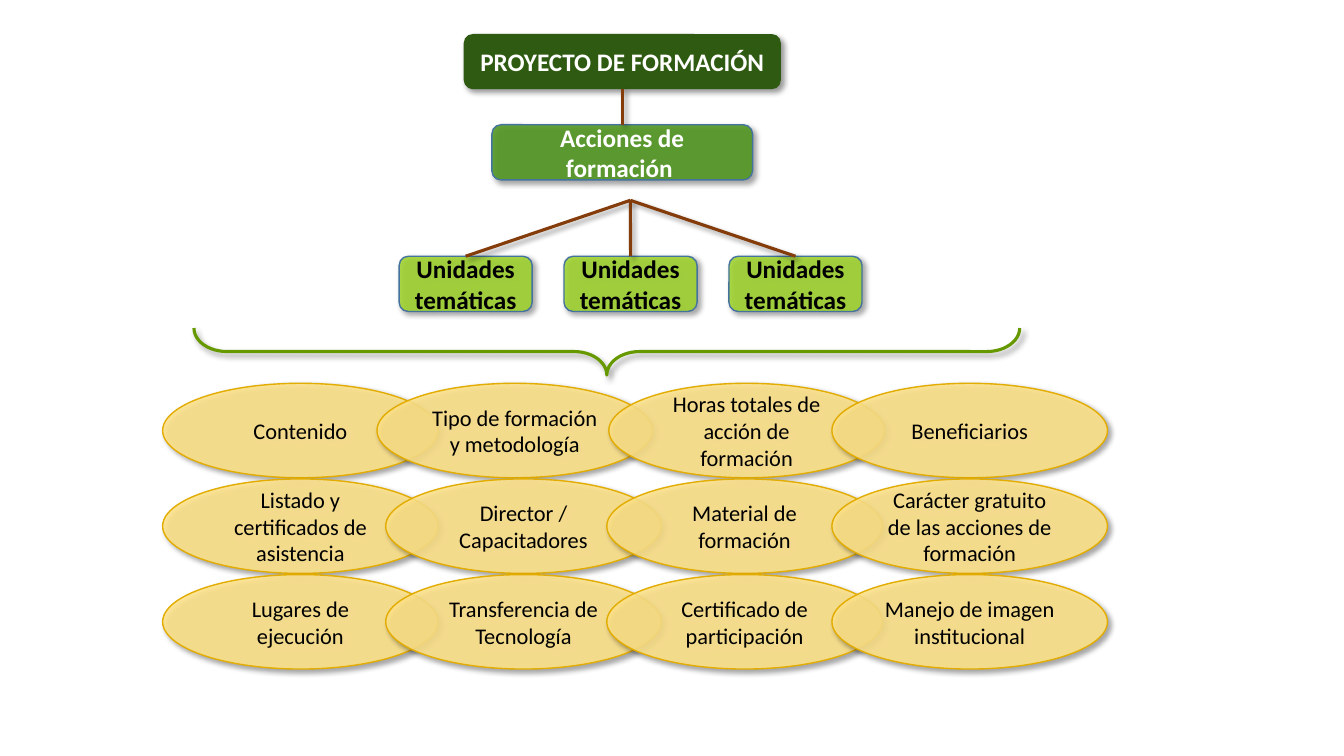
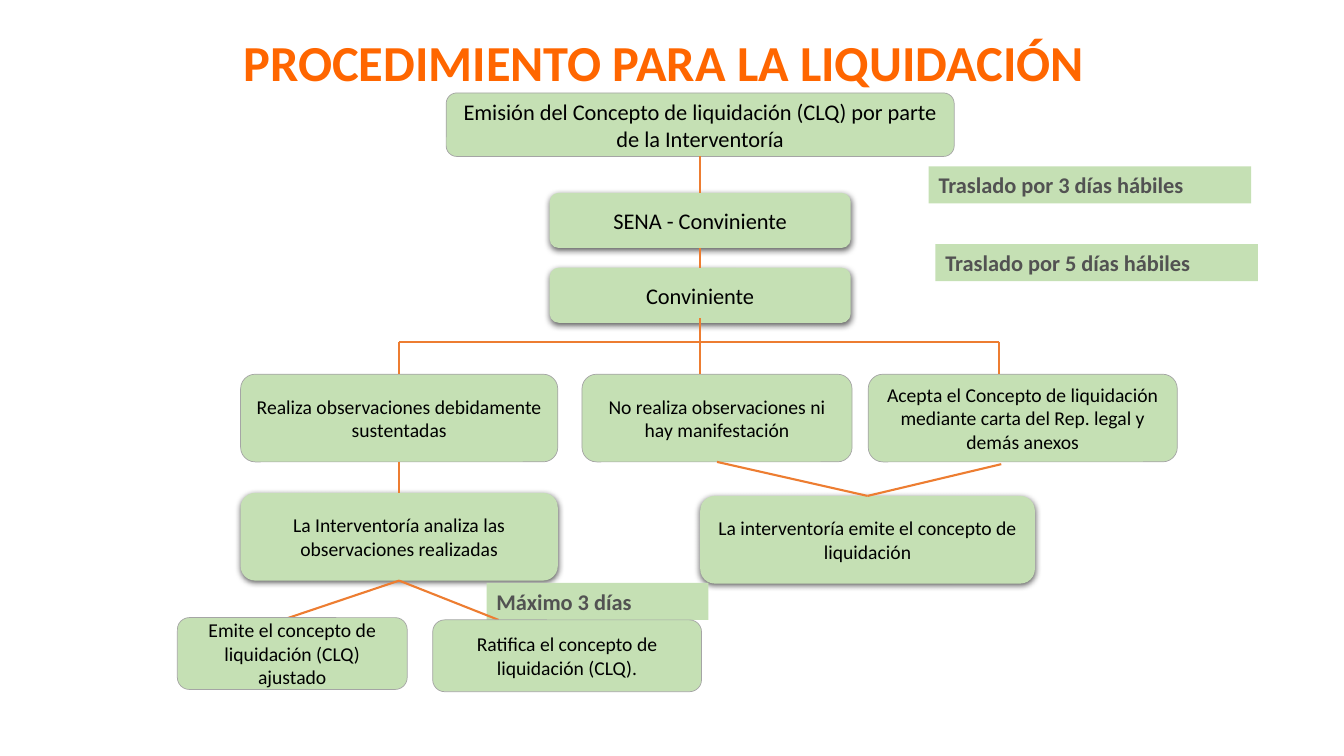
"""Build two process diagrams: a training project tree and a settlement procedure."""
from dataclasses import dataclass, replace
from typing import Any, NamedTuple, Optional, Union

from lxml import etree
from pptx import Presentation
from pptx import slide as pages
from pptx import util as u
from pptx.dml import color
from pptx.enum import shapes, text
from pptx.oxml import ns
from pptx.shapes import autoshape

WIDTH, HEIGHT = u.Inches(13.33), u.Inches(7.5)
FONT = "Calibri"
BLACK, WHITE, ORANGE, GREY = "000000", "FFFFFF", "FF6600", "525252"
SAGE, SILVER, AMBER = "C5E0B4", "A5A5A5", "ED7D31"
FOREST, LEAF, LIME, STEEL = "2F5A12", "519820", "9FD42A", "43739E"
BROWN, OLIVE, CREAM, GOLD = "843C0B", "669900", "FFE389", "E2AC00"
ROUNDED = shapes.MSO_SHAPE.ROUNDED_RECTANGLE
TOP, BOTTOM = 0, 2


class Shadow(NamedTuple):
    """Outer shadow: opacity in percent, blur and distance in points, angle in degrees."""
    opacity: int
    blur: float
    distance: float
    angle: int


class Area(NamedTuple):
    """Rectangle in percent of the slide's width and height."""
    left: float
    top: float
    width: float
    height: float


class Point(NamedTuple):
    """Position in percent of the slide's width and height."""
    left: float
    top: float


class Joint(NamedTuple):
    """Connection site of a shape."""
    shape: autoshape.Shape
    site: int


class Topic(NamedTuple):
    """Ellipse label with its shift from the column, in percent of the width."""
    label: str
    shift: float = 0


@dataclass(frozen=True)
class Style:
    """Look of a shape and its text."""
    geometry: shapes.MSO_SHAPE = ROUNDED
    fill: Optional[str] = None
    opacity: int = 100
    outline: Optional[str] = None
    weight: float = 1
    shadow: Optional[Shadow] = None
    size: int = 16
    ink: str = BLACK
    bold: bool = False
    align: text.PP_ALIGN = text.PP_ALIGN.CENTER
    anchor: text.MSO_ANCHOR = text.MSO_ANCHOR.MIDDLE


@dataclass(frozen=True)
class Stroke:
    """Look of a connector."""
    ink: str
    weight: float
    shadow: Optional[Shadow] = None


End = Union[Point, Joint]
SLANTED = Shadow(40, 4, 3, 45)
DROPPED = Shadow(63, 4.5, 1.5, 90)

UNIT = Style(fill=LIME, opacity=85, outline=STEEL, shadow=SLANTED, size=18, bold=True)
ACTION = replace(UNIT, fill=LEAF, opacity=88, ink=WHITE)
PROJECT = replace(ACTION, fill=FOREST, opacity=100, outline=None)
BRACE = Style(geometry=shapes.MSO_SHAPE.RIGHT_BRACE, outline=OLIVE, weight=2.25, shadow=SLANTED)
TOPIC = Style(geometry=shapes.MSO_SHAPE.OVAL, fill=CREAM, opacity=87, outline=GOLD, shadow=SLANTED)
BRANCH = Stroke(BROWN, 2.25, SLANTED)

PARTY = Style(fill=SAGE, shadow=DROPPED)
REVIEW = replace(PARTY, size=14)
ISSUE = Style(fill=SAGE, outline=SILVER, weight=0.5)
OUTCOME = replace(ISSUE, size=14)
DEADLINE = Style(geometry=shapes.MSO_SHAPE.RECTANGLE, fill=SAGE, ink=GREY, bold=True,
                 align=text.PP_ALIGN.LEFT, anchor=text.MSO_ANCHOR.TOP)
TITLE = Style(size=36, ink=ORANGE, bold=True)
FLOW = Stroke(AMBER, 1.5)

TOPICS = (
    (Topic("Contenido"), Topic("Tipo de formación y metodología", -0.65),
     Topic("Horas totales de acción de formación"), Topic("Beneficiarios")),
    (Topic("Listado y certificados de asistencia"), Topic("Director / Capacitadores"),
     Topic("Material de formación", -0.15),
     Topic("Carácter gratuito de las acciones de formación")),
    (Topic("Lugares de ejecución"), Topic("Transferencia de Tecnología"),
     Topic("Certificado de participación", -0.15), Topic("Manejo de imagen institucional")),
)


def rgb(code: str) -> color.RGBColor:
    """Turn a hex string into a colour."""
    return color.RGBColor.from_string(code)


def across(share: float) -> u.Emu:
    """Turn a percentage of the slide's width into a length."""
    return u.Emu(round(WIDTH * share / 100))


def down(share: float) -> u.Emu:
    """Turn a percentage of the slide's height into a length."""
    return u.Emu(round(HEIGHT * share / 100))


def place(area: Area) -> tuple[u.Emu, u.Emu, u.Emu, u.Emu]:
    """Turn an area into left, top, width and height."""
    return across(area.left), down(area.top), across(area.width), down(area.height)


def apply(target: Any, values: dict[str, Any]) -> None:
    """Set each named attribute of the target."""
    for name, value in values.items():
        setattr(target, name, value)


def add_alpha(paint: Any, percent: int) -> None:
    """Make a colour element partly transparent."""
    etree.SubElement(paint, ns.qn("a:alpha"), val=str(percent * 1000))


def cast_shadow(properties: Any, shadow: Optional[Shadow]) -> None:
    """Replace the theme's shadow by the given one or by none."""
    effects = etree.SubElement(properties, ns.qn("a:effectLst"))
    if shadow:
        outer = etree.SubElement(
            effects, ns.qn("a:outerShdw"), blurRad=str(u.Pt(shadow.blur)),
            dist=str(u.Pt(shadow.distance)), dir=str(shadow.angle * 60000),
            algn="ctr", rotWithShape="0")
        add_alpha(etree.SubElement(outer, ns.qn("a:srgbClr"), val=BLACK), shadow.opacity)


def write(shape: autoshape.Shape, label: str, style: Style) -> None:
    """Write a label in the shape."""
    frame = shape.text_frame
    apply(frame, {"word_wrap": True, "vertical_anchor": style.anchor})
    paragraph = frame.paragraphs[0]
    paragraph.alignment = style.align
    run = paragraph.add_run()
    run.text = label
    apply(run.font, {"name": FONT, "size": u.Pt(style.size), "bold": style.bold})
    run.font.color.rgb = rgb(style.ink)


def draw(slide: pages.Slide, area: Area, style: Style, label: str = "") -> autoshape.Shape:
    """Draw a styled shape with its label."""
    shape = slide.shapes.add_shape(style.geometry, *place(area))
    if style.fill:
        shape.fill.solid()
        shape.fill.fore_color.rgb = rgb(style.fill)
        if style.opacity < 100:
            add_alpha(shape._element.spPr.find(".//" + ns.qn("a:srgbClr")), style.opacity)
    else:
        shape.fill.background()
    if style.outline:
        shape.line.color.rgb = rgb(style.outline)
        shape.line.width = u.Pt(style.weight)
    else:
        shape.line.fill.background()
    cast_shadow(shape._element.spPr, style.shadow)
    if label:
        write(shape, label, style)
    return shape


def link(slide: pages.Slide, start: End, end: End, stroke: Stroke) -> None:
    """Draw a straight connector between points or connection sites."""
    corners = [(across(tip.left), down(tip.top)) if isinstance(tip, Point) else (0, 0)
               for tip in (start, end)]
    line = slide.shapes.add_connector(shapes.MSO_CONNECTOR.STRAIGHT, *corners[0], *corners[1])
    if isinstance(start, Joint):
        line.begin_connect(*start)
    if isinstance(end, Joint):
        line.end_connect(*end)
    line.line.color.rgb = rgb(stroke.ink)
    line.line.width = u.Pt(stroke.weight)
    cast_shadow(line._element.spPr, stroke.shadow)


def build_project(slide: pages.Slide) -> None:
    """Draw the tree of the training project and its topics."""
    actions = draw(slide, Area(36.6, 16.5, 19.4, 7.3), ACTION, "Acciones de formación ")
    fork = Point(46.9, 26.5)
    for column in range(3):
        unit = draw(slide, Area(29.7 + 12.27 * column, 33.9, 9.9, 7.3), UNIT, "Unidades temáticas")
        link(slide, fork, Joint(unit, TOP), BRANCH)
    project = draw(slide, Area(34.5, 4.5, 23.6, 7.3), PROJECT, "PROYECTO DE FORMACIÓN")
    link(slide, Joint(project, BOTTOM), Joint(actions, TOP), BRANCH)
    brace = draw(slide, Area(43.4, -8.1, 3.5, 109.2), BRACE)
    brace.rotation = 90
    brace.adjustments[0] = 0.7
    for row, topics in enumerate(TOPICS):
        for column, topic in enumerate(topics):
            left = 12.1 + 16.6 * column + topic.shift
            draw(slide, Area(left, 50.7 + 12.65 * row, 20.5, 12.5), TOPIC, topic.label)


def build_settlement(slide: pages.Slide) -> None:
    """Draw the flow of the settlement procedure."""
    title = slide.shapes.add_textbox(*place(Area(2.1, 4, 94.6, 8.1)))
    write(title, "PROCEDIMIENTO PARA LA LIQUIDACIÓN", TITLE)
    apply(title.text_frame, {f"margin_{side}": 0 for side in ("left", "top", "right", "bottom")})

    issue = draw(slide, Area(33.2, 12.3, 37.8, 8.4), ISSUE,
                 "Emisión del Concepto de liquidación (CLQ) por parte de la Interventoría")
    agency = draw(slide, Area(40.9, 25.5, 22.4, 7.3), PARTY, "SENA - Conviniente")
    partner = draw(slide, Area(40.9, 35.4, 22.4, 7.3), PARTY, "Conviniente")
    remarks = draw(slide, Area(17.9, 49.5, 23.6, 11.6), OUTCOME,
                   "Realiza observaciones debidamente sustentadas")
    silence = draw(slide, Area(43.3, 49.5, 20.1, 11.6), OUTCOME,
                   "No realiza observaciones ni hay manifestación")
    draw(slide, Area(64.6, 49.5, 23, 11.6), OUTCOME,
         "Acepta el Concepto de liquidación mediante carta del Rep. legal y demás anexos")
    verdict = draw(slide, Area(52.1, 65.6, 24.9, 11.6), REVIEW,
                   "La interventoría emite el concepto de liquidación")
    analysis = draw(slide, Area(17.9, 65.2, 23.6, 11.6), REVIEW,
                    "La Interventoría analiza las observaciones realizadas")
    for left, top, width, label in (
            (69.1, 22, 24, "Traslado por 3 días hábiles"),
            (69.6, 32.3, 24, "Traslado por 5 días hábiles"),
            (36.2, 77.1, 16.5, "Máximo 3 días")):
        draw(slide, Area(left, top, width, 4.9), DEADLINE, label)

    bar, left_end, right_end = 45.2, 29.7, 74.3
    for start, end in (
            (Joint(issue, BOTTOM), Joint(agency, TOP)),
            (Joint(agency, BOTTOM), Joint(partner, TOP)),
            (Point(52.1, 42.1), Point(52.1, 49.5)),
            (Point(left_end, bar), Point(right_end, bar)),
            (Point(left_end, bar), Joint(remarks, TOP)),
            (Point(right_end, bar), Point(right_end, 49.5)),
            (Joint(remarks, BOTTOM), Joint(analysis, TOP)),
            (Joint(silence, BOTTOM), Joint(verdict, TOP)),
            (Point(74.5, 61.4), Joint(verdict, TOP)),
            (Joint(analysis, BOTTOM), Point(21, 82)),
            (Joint(analysis, BOTTOM), Point(37.1, 82))):
        link(slide, start, end, FLOW)

    draw(slide, Area(13.2, 81.7, 17.1, 9.5), OUTCOME,
         "Emite el concepto de liquidación (CLQ) ajustado")
    draw(slide, Area(32.2, 82, 20, 9.5), OUTCOME, "Ratifica el concepto de liquidación (CLQ).")


def main() -> None:
    """Build and save the presentation."""
    deck = Presentation()
    apply(deck, {"slide_width": WIDTH, "slide_height": HEIGHT})
    for build in (build_project, build_settlement):
        build(deck.slides.add_slide(deck.slide_layouts[6]))
    deck.save("out.pptx")


if __name__ == "__main__":
    main()
